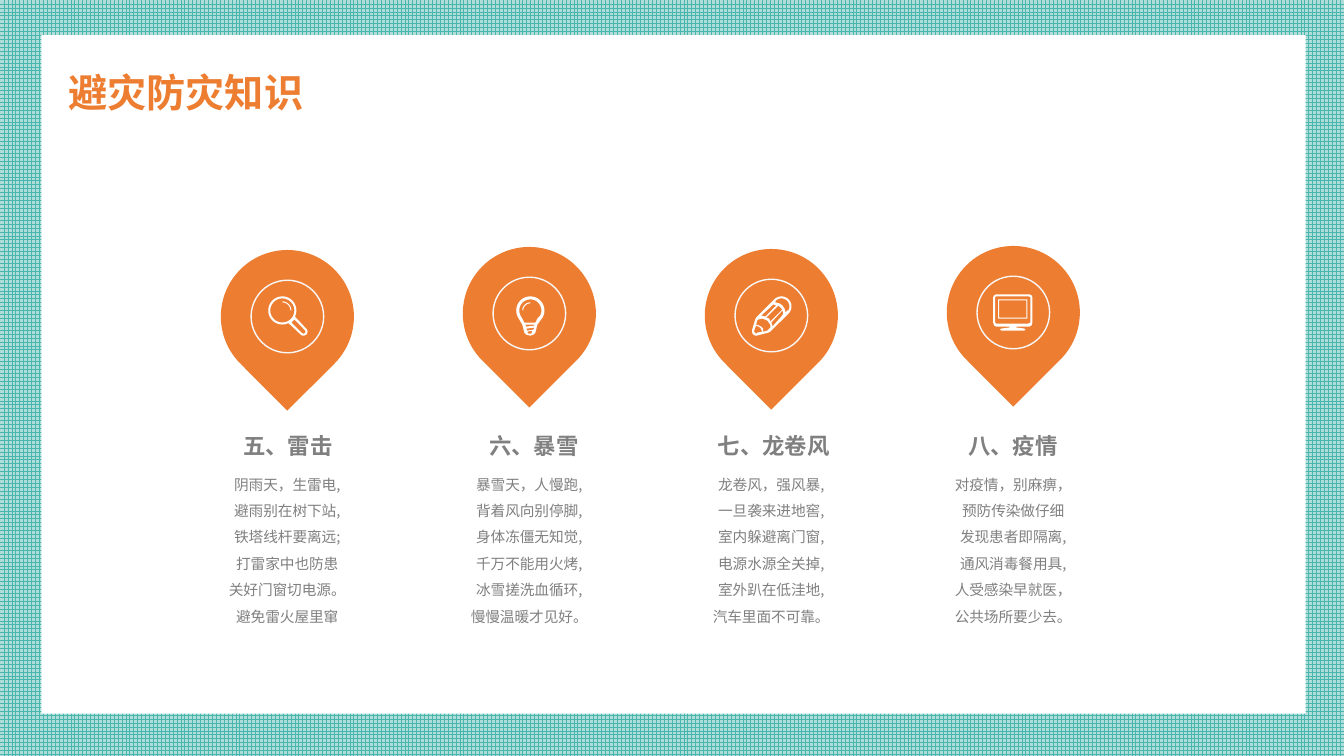
"""Build the slide on disaster prevention rhymes with four map pins."""
from dataclasses import dataclass
from math import cos, radians, sin

from lxml.etree import SubElement
from pptx import Presentation
from pptx.dml.color import RGBColor
from pptx.enum.dml import MSO_PATTERN
from pptx.enum.shapes import MSO_SHAPE as Preset
from pptx.enum.text import MSO_AUTO_SIZE as AutoSize, PP_ALIGN as Align
from pptx.oxml.ns import qn
from pptx.util import Pt

PX = 9144
FONT = "Noto Sans CJK SC"
COLORS = {
    "grid": "47B6AE",
    "backdrop": "B1DDD8",
    "panel": "FFFFFF",
    "accent": "ED7D31",
    "ring": "F7F7F7",
    "icon": "FFFFFF",
    "text": "808080",
}
COLUMN_STEP = 240
RING_INSET = 30

Contour = list[tuple[float, float]]
Icon = list[list[Contour]]


@dataclass(frozen=True)
class Box:
    left: int
    top: int
    width: int
    height: int


@dataclass(frozen=True)
class TextStyle:
    size: float
    color: str
    bold: bool = False
    align: Align = Align.CENTER
    spacing: float = 1.0
    wrap: bool = True


@dataclass(frozen=True)
class Topic:
    heading: str
    heading_box: Box
    rhyme: list[str]
    pin_top: int
    icon_left: int
    icon_top: int
    icon: Icon


TITLE = TextStyle(28, "accent", bold=True, align=Align.LEFT, spacing=1.5)
HEADING = TextStyle(16, "text", bold=True, wrap=False)
RHYME = TextStyle(10.5, "text", spacing=1.5)


def arc(x: float, y: float, radius: float, start: int, end: int) -> Contour:
    """Return points along an arc, in degrees clockwise from the right."""
    steps = 24
    angles = [radians(start + (end - start) * i / steps) for i in range(steps + 1)]
    return [(x + radius * cos(a), y + radius * sin(a)) for a in angles]


def glint(x: int, y: int, radius: int, start: int) -> list[Contour]:
    """Return a thin quarter ring."""
    return [arc(x, y, radius, start, start + 90) + arc(x, y, radius - 1, start + 90, start)]


def rectangle(left: int, top: int, right: int, bottom: int) -> Contour:
    """Return the corners of a rectangle."""
    return [(left, top), (right, top), (right, bottom), (left, bottom)]


MAGNIFIER: Icon = [
    [
        arc(14, 14, 14, 64, 386) + arc(35, 35, 4, -45, 135),
        arc(14, 14, 12, 0, 360),
        [(26, 23)] + arc(35, 35, 2, -45, 135) + [(23, 26)],
    ],
    glint(14, 14, 9, -90),
]
BULB: Icon = [
    [
        arc(14, 14, 14, 150, 390)
        + [(21, 28), (19, 36), (17, 38), (14, 39), (10, 38), (8, 36), (6, 28)],
        arc(14, 14, 11, 150, 390) + [(21, 22), (19, 26), (8, 26), (6, 22)],
        [(9, 28), (18, 28), (18, 29), (10, 30)],
        [(10, 32), (18, 31), (17, 33), (11, 34)],
        [(11, 35), (16, 34), (15, 37), (12, 37)],
    ],
    glint(14, 14, 8, 180),
]
PENCIL: Icon = [[
    arc(29, 10, 10, -135, 45) + [(18, 35), (16, 36)]
    + arc(4, 35, 4, 70, 180) + [(0, 33), (3, 23), (4, 21)],
    [(35, 14), (33, 16), (33, 15), (32, 12), (30, 9), (27, 7), (23, 6)]
    + arc(29, 10, 8, -135, 30),
    [(11, 35), (11, 32), (9, 30), (7, 29), (4, 28), (5, 24), (6, 23), (10, 22),
     (15, 24), (18, 28), (18, 31), (16, 33), (15, 34)],
    [(5, 36), (4, 37), (2, 35), (2, 34), (4, 29), (8, 31), (10, 35)],
    [(13, 20), (9, 19), (19, 10), (21, 8), (24, 9)],
    [(18, 25), (17, 22), (14, 21), (26, 9), (28, 11), (30, 13)],
    [(20, 29), (19, 26), (30, 14), (31, 17), (29, 20), (20, 30)],
]]
MONITOR: Icon = [
    [rectangle(5, 5, 34, 24), rectangle(6, 6, 33, 23)],
    [
        [(3, 0), (36, 0), (38, 1), (39, 3), (39, 28), (38, 31), (36, 32), (23, 32),
         (23, 33), (31, 34), (32, 35), (31, 36), (8, 36), (7, 35), (8, 34), (16, 33),
         (16, 32), (3, 32), (1, 31), (0, 28), (0, 3), (1, 1)],
        [(3, 2), (35, 2), (37, 3), (37, 28), (35, 29), (3, 29), (2, 28), (2, 3)],
    ],
]
TOPICS = [
    Topic("五、雷击", Box(231, 424, 109, 37),
          ["阴雨天，生雷电,", "避雨别在树下站,", "铁塔线杆要离远;",
           "打雷家中也防患", "关好门窗切电源。", "避免雷火屋里窜"],
          248, 266, 294, MAGNIFIER),
    Topic("六、暴雪", Box(475, 424, 109, 37),
          ["暴雪天，人慢跑,", "背着风向别停脚,", "身体冻僵无知觉,",
           "千万不能用火烤,", "冰雪搓洗血循环,", "慢慢温暖才见好。"],
          245, 512, 294, BULB),
    Topic("七、龙卷风", Box(702, 424, 131, 37),
          ["龙卷风，强风暴,", "一旦袭来进地窖,", "室内躲避离门窗,",
           "电源水源全关掉,", "室外趴在低洼地,", "汽车里面不可靠。"],
          247, 746, 294, PENCIL),
    Topic("八、疫情", Box(950, 424, 109, 37),
          ["对疫情，别麻痹，", "预防传染做仔细", "发现患者即隔离,",
           "通风消毒餐用具,", "人受感染早就医，", "公共场所要少去。"],
          244, 985, 292, MONITOR),
]


def rgb(name: str) -> RGBColor:
    """Look up a palette colour."""
    return RGBColor.from_string(COLORS[name])


def emu(box: Box) -> list[int]:
    """Scale a box to EMU."""
    return [side * PX for side in (box.left, box.top, box.width, box.height)]


def paint(shape, fill: str, line: str | None = None) -> None:
    """Set a plain fill and an optional one-point outline."""
    shape.shadow.inherit = False
    shape.fill.solid()
    shape.fill.fore_color.rgb = rgb(fill)
    if line:
        shape.line.color.rgb = rgb(line)
        shape.line.width = Pt(1)
    else:
        shape.line.fill.background()


def add_text(slide, box: Box, lines: list[str], style: TextStyle) -> None:
    """Add a text box with one paragraph for each line."""
    frame = slide.shapes.add_textbox(*emu(box)).text_frame
    frame.text = "\n".join(lines)
    frame.word_wrap = style.wrap
    frame.auto_size = AutoSize.SHAPE_TO_FIT_TEXT
    for paragraph in frame.paragraphs:
        paragraph.alignment = style.align
        paragraph.line_spacing = style.spacing
        for run in paragraph.runs:
            run.font.name = FONT
            run.font.size = Pt(style.size)
            run.font.bold = style.bold
            run.font.color.rgb = rgb(style.color)
            SubElement(run.font._element, qn("a:ea"), typeface=FONT)


def add_icon(slide, topic: Topic) -> None:
    """Draw each part of the topic's icon as a filled outline."""
    for part in topic.icon:
        outlines = [[((topic.icon_left + x) * PX, (topic.icon_top + y) * PX) for x, y in contour]
                    for contour in part]
        builder = slide.shapes.build_freeform(*outlines[0][0])
        for index, outline in enumerate(outlines):
            if index:
                builder.move_to(*outline[0])
            builder.add_line_segments(outline[1:], close=True)
        paint(builder.convert_to_shape(), "icon")


def add_topic(slide, topic: Topic, column: int) -> None:
    """Draw one pin with its icon, heading and rhyme."""
    offset = column * COLUMN_STEP
    add_text(slide, Box(182 + offset, 458, 206, 169), topic.rhyme, RHYME)
    add_text(slide, topic.heading_box, [topic.heading], HEADING)
    pin_box = Box(219 + offset, topic.pin_top, 132, 132)
    pin = slide.shapes.add_shape(Preset.TEAR, *emu(pin_box))
    pin.rotation = 135
    paint(pin, "accent")
    ring_box = Box(pin_box.left + RING_INSET, pin_box.top + RING_INSET, 72, 72)
    paint(slide.shapes.add_shape(Preset.OVAL, *emu(ring_box)), "accent", "ring")
    add_icon(slide, topic)


def main() -> None:
    """Build and save the slide."""
    deck = Presentation()
    deck.slide_width, deck.slide_height = 1333 * PX, 750 * PX
    slide = deck.slides.add_slide(deck.slide_layouts[6])
    backdrop = slide.background.fill
    backdrop.patterned()
    backdrop.pattern = MSO_PATTERN.LARGE_GRID
    backdrop.fore_color.rgb = rgb("grid")
    backdrop.back_color.rgb = rgb("backdrop")
    panel = slide.shapes.add_shape(Preset.RECTANGLE, *emu(Box(41, 35, 1254, 673)))
    paint(panel, "panel")
    add_text(slide, Box(58, 39, 843, 72), ["避灾防灾知识"], TITLE)
    for column, topic in enumerate(TOPICS):
        add_topic(slide, topic, column)
    deck.save("out.pptx")


if __name__ == "__main__":
    main()
